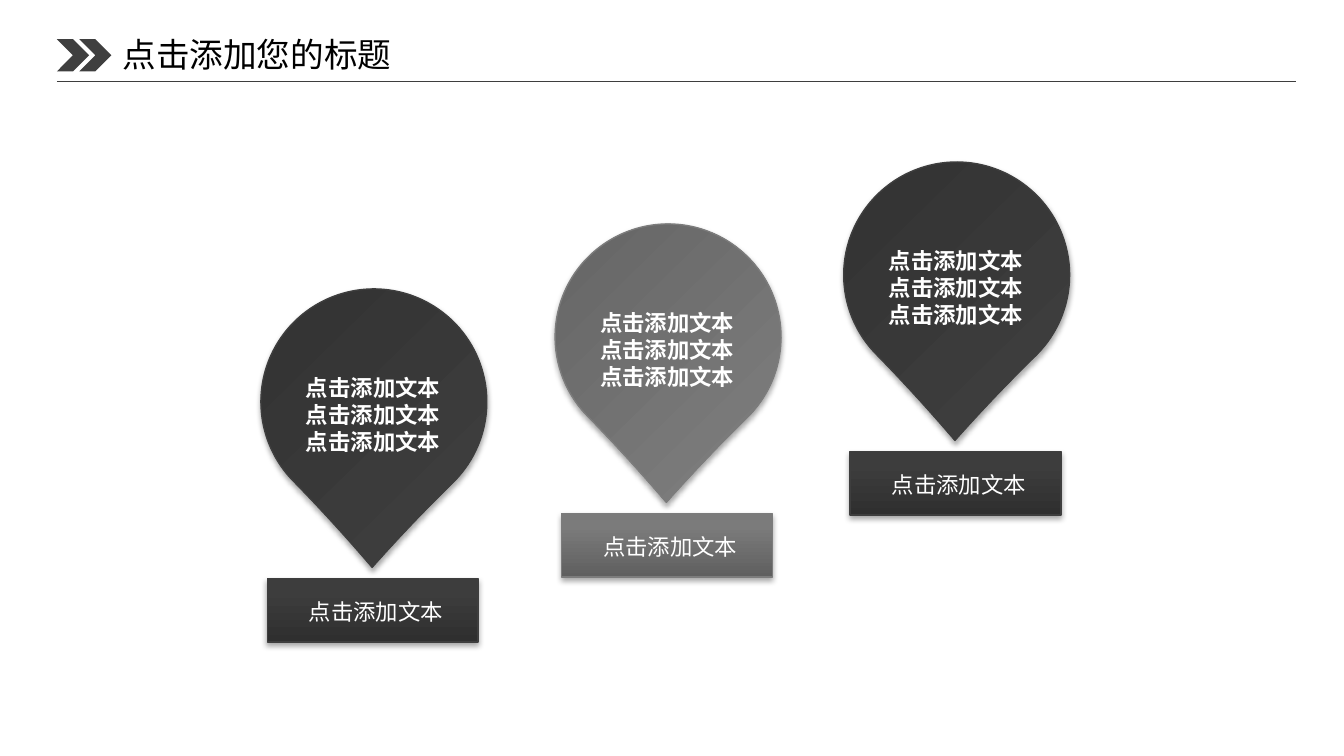
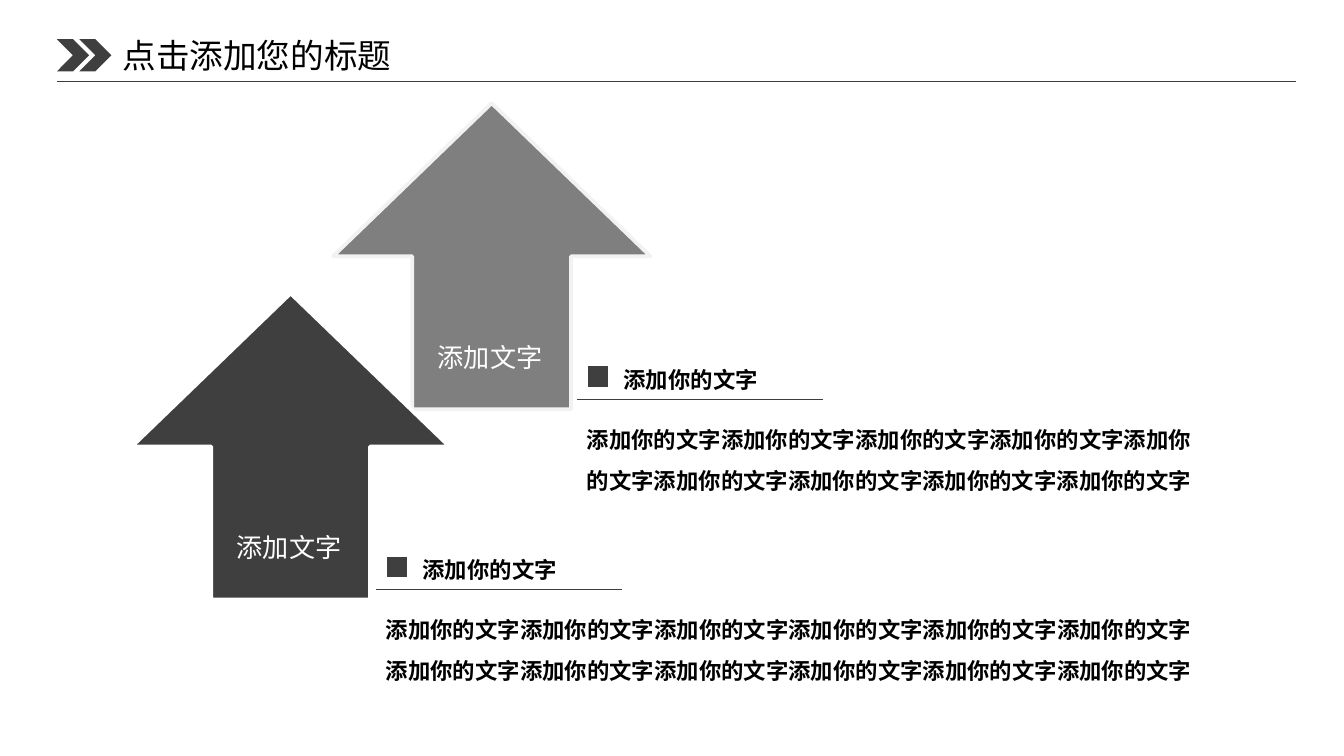
from lxml import etree
from pptx import Presentation
from pptx.dml.color import RGBColor
from pptx.enum.shapes import MSO_CONNECTOR, MSO_SHAPE
from pptx.enum.text import MSO_ANCHOR, MSO_AUTO_SIZE, PP_ALIGN
from pptx.oxml.ns import qn
from pptx.util import Pt

CHEVRON = MSO_SHAPE.CHEVRON
TEAR = MSO_SHAPE.TEAR
RECT = MSO_SHAPE.RECTANGLE
ARROW = MSO_SHAPE.UP_ARROW
STRAIGHT = MSO_CONNECTOR.STRAIGHT
GROW = MSO_AUTO_SIZE.SHAPE_TO_FIT_TEXT
TOP = MSO_ANCHOR.TOP
LEFT = PP_ALIGN.LEFT

FONT = "Noto Sans CJK SC"
BLACK, WHITE, PALE = "000000", "FFFFFF", "F2F2F2"
DARK, EDGE, GRAY = "3F3F3F", "3E3E3E", "7F7F7F"
DEEP = ("2F2F2F", "3D3D3D", EDGE)
SOFT = ("5F5F5F", "7B7B7B", "7C7C7C")


def color(code):
    return RGBColor.from_string(code)


def write(frame, text, size=12, ink=BLACK, bold=False, gap=1.0, wrap=True):
    frame.word_wrap = wrap
    frame.auto_size = GROW
    frame.vertical_anchor = TOP
    frame.margin_left = frame.margin_right = Pt(7.2)
    frame.margin_top = frame.margin_bottom = Pt(3.6)
    for i, line in enumerate(text.split("\n")):
        para = frame.add_paragraph() if i else frame.paragraphs[0]
        para.alignment = LEFT
        para.line_spacing = gap
        run = para.add_run()
        run.text = line
        font = run.font
        font.name, font.size, font.bold = FONT, Pt(size), bold
        font.color.rgb = color(ink)
        props = run._r.get_or_add_rPr()
        etree.SubElement(props, qn("a:ea"), typeface=FONT)


class Deck:
    def __init__(self):
        self.show = Presentation()
        self.show.slide_width, self.show.slide_height = Pt(720), Pt(405)
        self.slide = None

    def page(self, text, top):
        layout = self.show.slide_layouts[5]
        self.slide = self.show.slides.add_slide(layout)
        title = self.slide.shapes.title
        title.left, title.top = Pt(58.4), Pt(top)
        title.width, title.height = Pt(160), Pt(29)
        write(title.text_frame, text, size=18, wrap=False)
        for left in (30.5, 42.5):
            self.shape(CHEVRON, left, 21, 17.2, 17.2, DARK)
        self.rule(30.5, 43.7, 664)

    def shape(self, kind, left, top, width, height, fill, edge=None, thick=2):
        item = self.slide.shapes.add_shape(
            kind, Pt(left), Pt(top), Pt(width), Pt(height))
        item.shadow.inherit = False
        item.fill.solid()
        item.fill.fore_color.rgb = color(fill)
        if edge:
            item.line.color.rgb = color(edge)
            item.line.width = Pt(thick)
        else:
            item.line.fill.background()
        return item

    def glossy(self, kind, left, top, width, height, tone):
        low, high, edge = tone
        item = self.shape(kind, left, top, width, height, high, edge, 0.75)
        item.fill.gradient()
        item.fill.gradient_angle = 90
        for stop, place, code in zip(
                item.fill.gradient_stops, (0, 0.8), (low, high)):
            stop.position = place
            stop.color.rgb = color(code)
        effects = item._element.spPr.find(qn("a:effectLst"))
        shade = etree.SubElement(
            effects, qn("a:outerShdw"), blurRad=str(Pt(3.1)),
            dist=str(Pt(1.8)), dir="5400000", rotWithShape="0")
        black = etree.SubElement(shade, qn("a:srgbClr"), val=BLACK)
        etree.SubElement(black, qn("a:alpha"), val="35000")
        return item

    def rule(self, left, top, width):
        line = self.slide.shapes.add_connector(
            STRAIGHT, Pt(left), Pt(top), Pt(left + width), Pt(top))
        line.line.color.rgb = color(EDGE)
        line.line.width = Pt(0.75)
        etree.SubElement(line._element.spPr, qn("a:effectLst"))

    def text(self, left, top, width, height, words, **style):
        box = self.slide.shapes.add_textbox(
            Pt(left), Pt(top), Pt(width), Pt(height))
        write(box.text_frame, words, **style)

    def pin(self, left, top, tone):
        drop = self.glossy(TEAR, left, top, 121, 121, tone)
        drop.adjustments[0] = 1.036
        drop.rotation = 135.6
        self.glossy(RECT, left + 3.4, top + 155, 113, 34.2, tone)
        words = "点击添加文本"
        self.text(left + 17, top + 42, 94.3, 51, f"{words * 2}\n{words}",
                  ink=WHITE, bold=True)
        self.text(left + 18.6, top + 162, 88.6, 21.8, words, ink=WHITE)

    def step(self, left, top, fill, edge, count):
        self.shape(ARROW, left, top, 170, 164, fill, edge)
        self.shape(RECT, left + 135.4, top + 140, 13, 13, DARK, WHITE)
        self.rule(left + 131, top + 158.8, 131.4)
        words = "添加你的文字"
        self.text(left + 148.6, top + 137.4, 87, 21.8, words,
                  bold=True, wrap=False)
        start = left + 128.9
        self.text(start, top + 162.4, 655.2 - start, 50, words * count,
                  bold=True, gap=1.5)
        self.text(left + 49, top + 124.2, 72.7, 24.5, "添加文字",
                  size=14, ink=WHITE)


def main():
    deck = Deck()
    title = "点击添加您的标题"
    deck.page(title, 14.4)
    deck.pin(139.8, 154.8, DEEP)
    deck.pin(297.4, 120, SOFT)
    deck.pin(452, 86.8, DEEP)
    deck.page(title, 15)
    deck.step(178.4, 55.3, GRAY, PALE, 9)
    deck.step(70.7, 157.2, DARK, WHITE, 12)
    deck.show.save("out.pptx")


if __name__ == "__main__":
    main()
